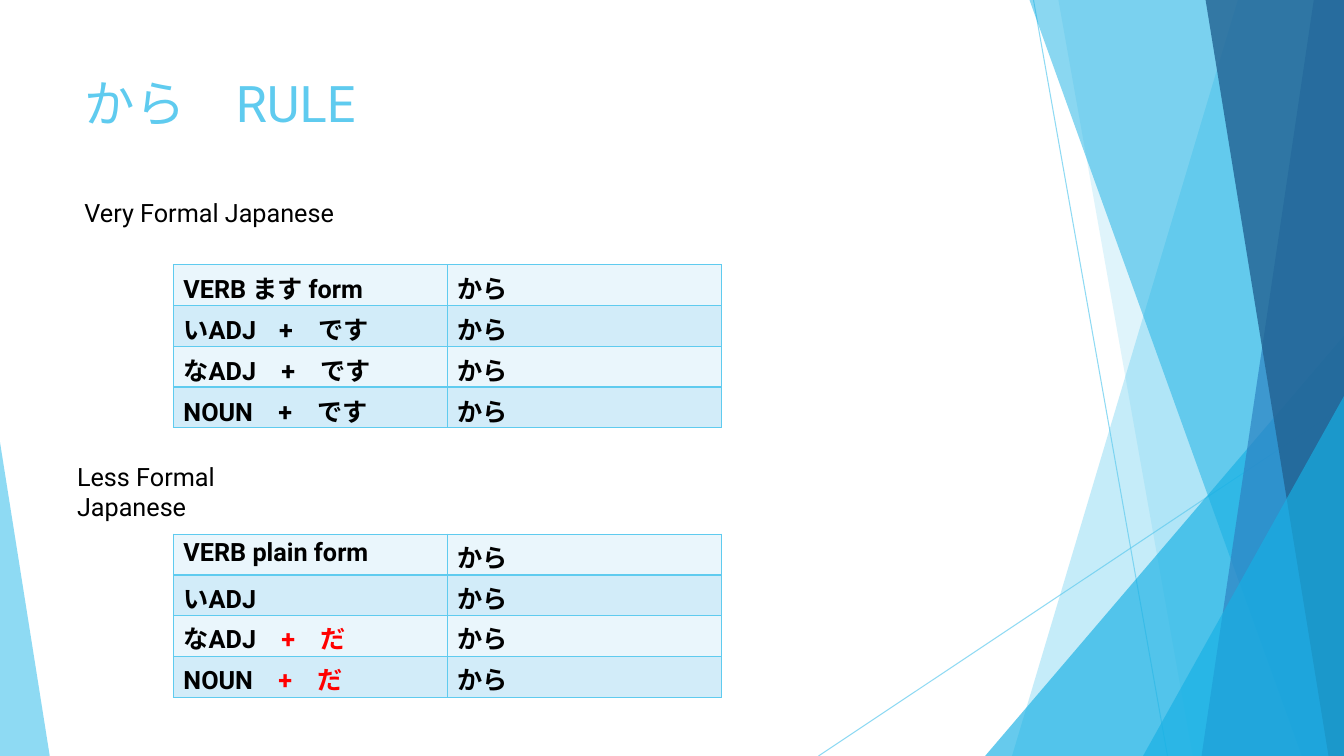
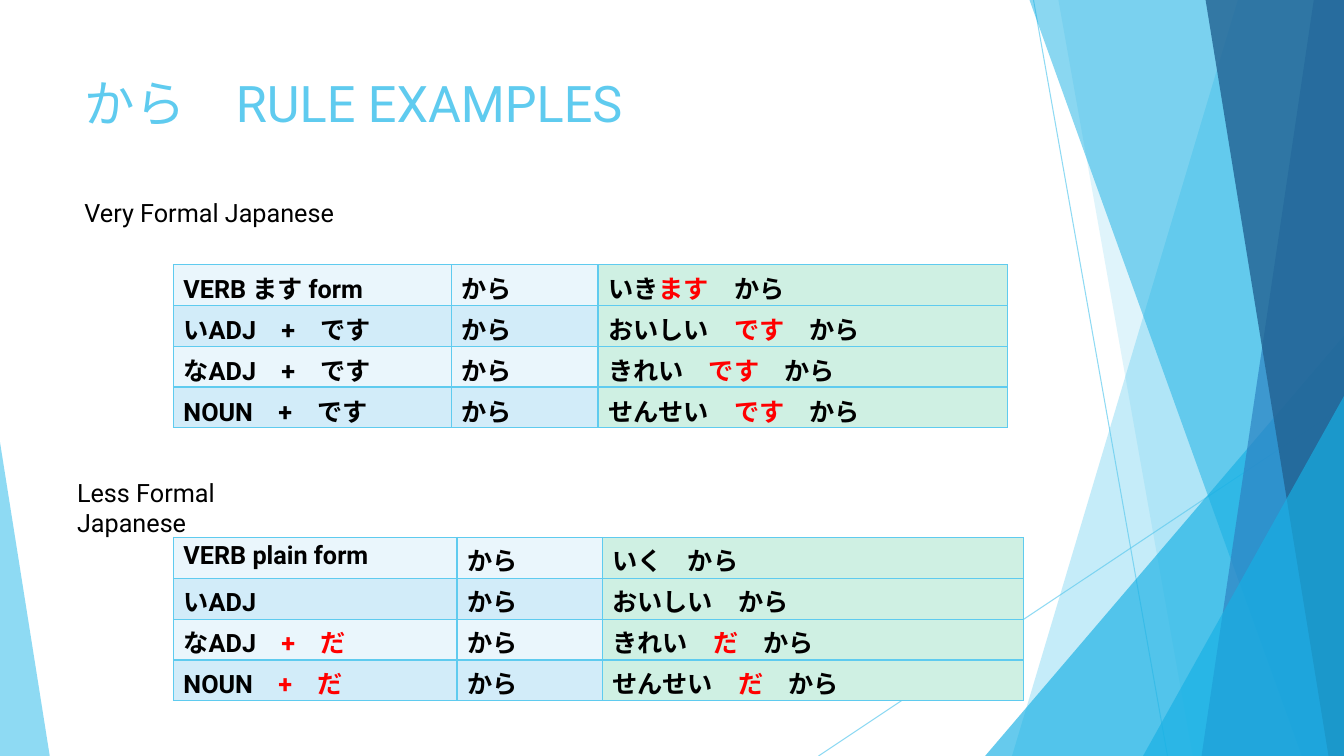
from dataclasses import dataclass

from lxml import etree
from pptx import Presentation
from pptx.dml.color import RGBColor
from pptx.enum.shapes import MSO_CONNECTOR, MSO_SHAPE
from pptx.enum.text import MSO_ANCHOR, MSO_AUTO_SIZE, PP_ALIGN
from pptx.oxml.ns import qn
from pptx.util import Inches, Pt

STRAIGHT = MSO_CONNECTOR.STRAIGHT
TRIANGLE = MSO_SHAPE.ISOSCELES_TRIANGLE
TOP = MSO_ANCHOR.TOP
LEFT = PP_ALIGN.LEFT
NO_FIT = MSO_AUTO_SIZE.NONE


@dataclass(frozen=True)
class Theme:
    font: str = "Roboto"
    title_size: int = 36
    body_size: int = 18
    gap_size: int = 12
    text: str = "000000"
    mark: str = "FF0000"
    sky: str = "5FCBEF"
    cyan: str = "17B0E4"
    blue: str = "2E83C3"
    navy: str = "226292"
    rows: tuple = ("EAF6FC", "D2ECF9")
    example: str = "CFF0E3"


T = Theme()
rgb = RGBColor.from_string

prs = Presentation()
prs.slide_width, prs.slide_height = Inches(13.33), Inches(7.5)

# The slide is a grid of 100 columns by 100 rows.
COL, ROW = prs.slide_width / 100, prs.slide_height / 100


def box(left, top, width, height):
    """Turn grid columns and rows into lengths."""
    return int(left * COL), int(top * ROW), int(width * COL), int(height * ROW)


def style(r, size, color, bold=False):
    r.font.name, r.font.size, r.font.bold = T.font, Pt(size), bold
    r.font.color.rgb = rgb(color)


# Shared backdrop: drawn on the first slide, then moved to the layout
layout = prs.slide_layouts[5]
for ph in list(layout.placeholders):
    if ph.placeholder_format.idx:
        ph.element.getparent().remove(ph.element)

first = prs.slides.add_slide(layout)
backdrop = []

for ends in ((76.9, 0, 86.87, 100), (100, 53.7, 60.9, 100)):
    line = first.shapes.add_connector(STRAIGHT, *box(*ends))
    line.line.color.rgb = rgb(T.sky)
    line.line.width = Pt(0.75)
    etree.SubElement(line.element.spPr, qn("a:effectLst"))
    backdrop.append((line, 70))

# band: top left, bottom left; triangle: left, top, width, apex
FACETS = [
    ((92.1, 75.3), T.sky, 36),
    ((78.75, 88.75), T.sky, 20),
    ((73.3, 44.4, 26.7, 1), T.cyan, 66),
    ((76.6, 96.85), T.cyan, 50),
    ((97.75, 89.4), T.blue, 70),
    ((89.7, 98.85), T.navy, 80),
    ((85.05, 52.4, 14.95, 1), T.cyan, 66),
    ((0, 58.5, 3.7, 0), T.sky, 70),
]
for outline, color, alpha in FACETS:
    if len(outline) == 2:
        upper, lower = outline
        fb = first.shapes.build_freeform(int(upper * COL), 0)
        corners = ((100, 0), (100, 100), (lower, 100))
        fb.add_line_segments([(int(x * COL), int(y * ROW)) for x, y in corners])
        sp = fb.convert_to_shape()
    else:
        left, top, width, apex = outline
        sp = first.shapes.add_shape(TRIANGLE, *box(left, top, width, 100 - top))
        sp.adjustments[0] = apex
    sp.shadow.inherit = False
    sp.fill.solid()
    sp.fill.fore_color.rgb = rgb(color)
    sp.line.fill.background()
    backdrop.append((sp, alpha))

for z, (sp, alpha) in enumerate(backdrop):
    for clr in sp.element.spPr.iter(qn("a:srgbClr")):
        etree.SubElement(clr, qn("a:alpha"), val=str(alpha * 1000))
    layout.shapes.element.insert(2 + z, sp.element)

# Asterisks enclose marked text; a marked blank is a narrow gap.
FORMAL = ["VERB ます form", "いADJ　+　です", "なADJ　+　です", "NOUN　+　です"]
FORMAL_NARROW = [FORMAL[0], "いADJ *　*+　です", *FORMAL[2:]]
PLAIN = ["VERB plain form", "いADJ", "なADJ　*+　だ*", "NOUN　*+　だ*"]
KARA = ["から"] * 4
FORMAL_EXAMPLES = ["いき*ます*　から", "おいしい　*です*　から",
                   "きれい　*です*　から", "せんせい　*です*　から"]
PLAIN_EXAMPLES = ["いく　から", "おいしい　から",
                  "きれい　*だ*　から", "せんせい　*だ*　から"]

# label: text, left, top, right inset; table: top, top and bottom inset, widths, columns
FORMAL_LABEL = ("Very Formal Japanese", 5.55, 25.45, 0)
PLAIN_LABEL = ("Less Formal Japanese", 5)
FORMAL_INSETS, PLAIN_INSETS = (0.05, 0.05), (0.04, 0)
SLIDES = [
    ("から　RULE",
     [FORMAL_LABEL, (*PLAIN_LABEL, 60.4, 0.3)],
     [(35, FORMAL_INSETS, (20.4, 20.4), (FORMAL_NARROW, KARA)),
      (70.65, PLAIN_INSETS, (20.4, 20.4), (PLAIN, KARA))]),
    ("から　RULE EXAMPLES",
     [FORMAL_LABEL, (*PLAIN_LABEL, 62.5, 0.3)],
     [(35, FORMAL_INSETS, (20.7, 10.9, 30.45), (FORMAL, KARA, FORMAL_EXAMPLES)),
      (71.1, PLAIN_INSETS, (21.1, 10.8, 31.35), (PLAIN, KARA, PLAIN_EXAMPLES))]),
]

for n, (heading, labels, tables) in enumerate(SLIDES):
    s = prs.slides.add_slide(layout) if n else first

    title = s.shapes.title
    title.left, title.top, title.width, title.height = box(5.55, 8.9, 70.5, 19.2)
    tf = title.text_frame
    tf.text = heading
    tf.vertical_anchor, tf.auto_size = TOP, NO_FIT
    tf.paragraphs[0].alignment = LEFT
    style(tf.paragraphs[0].runs[0], T.title_size, T.sky)

    for text, left, top, inset in labels:
        tf = s.shapes.add_textbox(*box(left, top, 20, 5.3)).text_frame
        tf.word_wrap, tf.margin_right = True, Inches(inset)
        tf.text = text
        style(tf.paragraphs[0].runs[0], T.body_size, T.text)

    for top, insets, widths, columns in tables:
        frame = s.shapes.add_table(4, len(widths), *box(12.9, top, sum(widths), 21.6))
        table = frame.table
        table.first_row = table.horz_banding = False
        for c, (width, texts) in enumerate(zip(widths, columns)):
            table.columns[c].width = int(width * COL)
            for i, text in enumerate(texts):
                cell = table.cell(i, c)
                cell.margin_top, cell.margin_bottom = map(Inches, insets)
                p = cell.text_frame.paragraphs[0]
                for k, part in enumerate(text.split("*")):
                    if part:
                        r = p.add_run()
                        r.text = part
                        style(r, T.body_size if part.strip() else T.gap_size,
                              T.mark if k % 2 else T.text, bold=True)
                tcPr = cell._tc.get_or_add_tcPr()
                for side in ("a:lnL", "a:lnR", "a:lnT", "a:lnB"):
                    ln = etree.SubElement(tcPr, qn(side), w=str(Pt(1)))
                    fill = etree.SubElement(ln, qn("a:solidFill"))
                    etree.SubElement(fill, qn("a:srgbClr"), val=T.sky)
                cell.fill.solid()
                cell.fill.fore_color.rgb = rgb(T.example if c == 2 else T.rows[i % 2])

prs.save("out.pptx")
